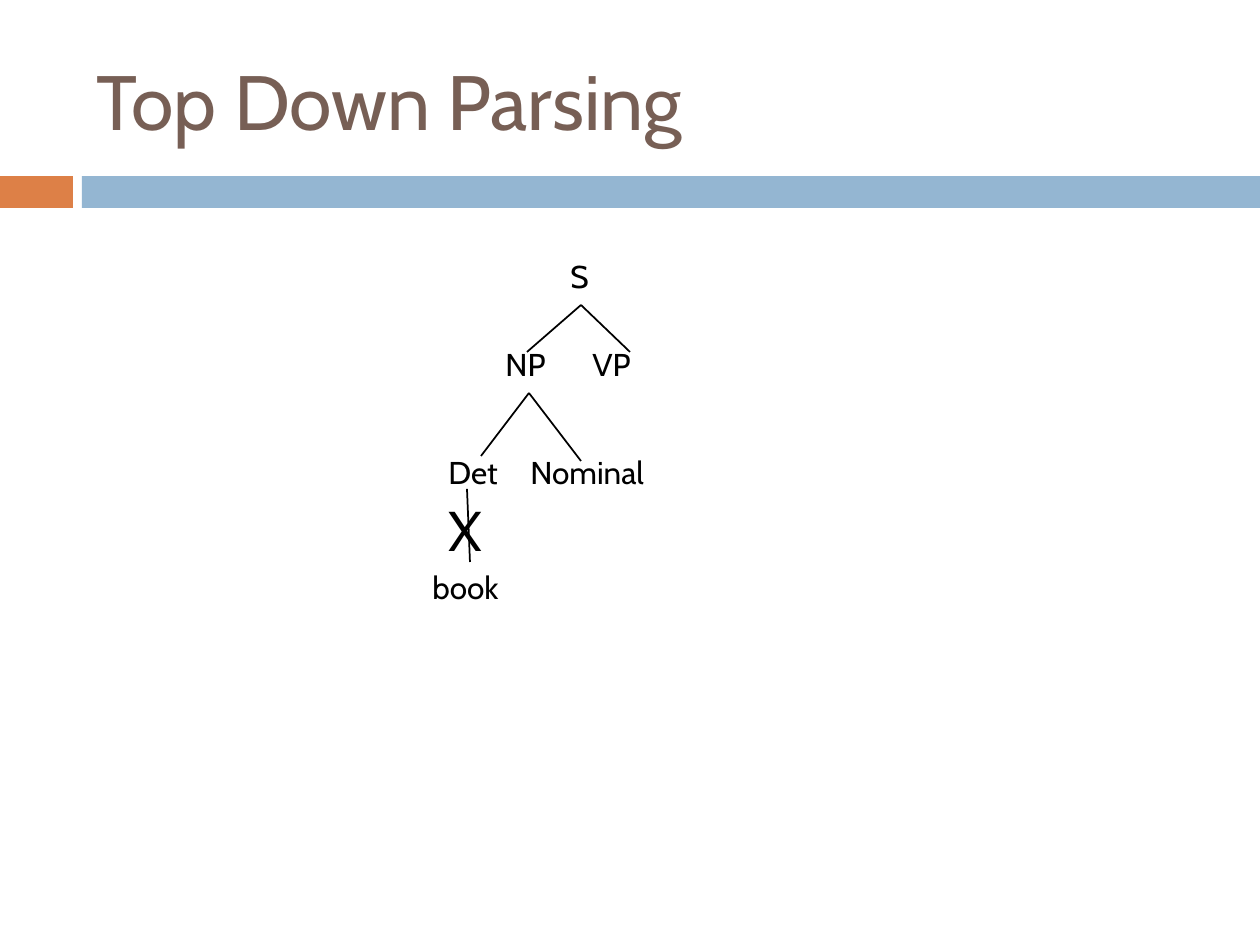
from pptx import Presentation
from pptx.dml.color import RGBColor
from pptx.enum.shapes import MSO_CONNECTOR, MSO_SHAPE
from pptx.enum.text import MSO_ANCHOR, PP_ALIGN
from pptx.oxml.ns import qn
from pptx.util import Pt
from lxml import etree

STRAIGHT = MSO_CONNECTOR.STRAIGHT
RECTANGLE = MSO_SHAPE.RECTANGLE
TOP, BOTTOM = 0, 2
PX = 914400 / 126
NODE_HEIGHT = 54


def color(hex_code):
    return RGBColor.from_string(hex_code)


def write(shape, text, size=18, ink="000000", anchor=MSO_ANCHOR.TOP):
    frame = shape.text_frame
    frame.word_wrap = True
    frame.vertical_anchor = anchor
    paragraph = frame.paragraphs[0]
    paragraph.alignment = PP_ALIGN.LEFT
    run = paragraph.add_run()
    run.text = text
    run.font.name = "Cabin"
    run.font.size = Pt(size)
    run.font.color.rgb = color(ink)


deck = Presentation()
deck.slide_width = round(1260 * PX)
deck.slide_height = round(945 * PX)
slide = deck.slides.add_slide(deck.slide_layouts[5])
shapes = slide.shapes

# Header: two-part band and title
for left, width, fill in ((0, 73, "DD8047"), (82, 1178, "94B6D2")):
    band = shapes.add_shape(RECTANGLE, *(round(v * PX) for v in (left, 176, width, 32)))
    band.shadow.inherit = False
    band.fill.solid()
    band.fill.fore_color.rgb = color(fill)
    band.line.fill.background()

title = shapes.title
title.left, title.top, title.width, title.height = (
    round(v * PX) for v in (84, 32, 1124, 136))
write(title, "Top Down Parsing", size=44, ink="775F55", anchor=MSO_ANCHOR.MIDDLE)

# Words of the parse tree: left, top, width, height, text size
words = {
    "S": (558, 251, 46, NODE_HEIGHT, 18),
    "NP": (493, 339, 72, NODE_HEIGHT, 18),
    "VP": (580, 339, 72, NODE_HEIGHT, 18),
    "Det": (436, 447, 84, NODE_HEIGHT, 18),
    "Nominal": (518, 447, 150, NODE_HEIGHT, 18),
    "book": (420, 562, 100, NODE_HEIGHT, 18),
    "X": (436, 489, 67, 80, 32),
}
nodes = {}
for word, (*box, size) in words.items():
    nodes[word] = shapes.add_textbox(*(round(v * PX) for v in box))
    write(nodes[word], word, size=size)

# Branches: start point, end point, word joined at the start, word joined at the end
branches = (
    (581, 305, 527, 352, "S", None),
    (581, 305, 630, 352, "S", None),
    (529, 393, 481, 456, "NP", None),
    (529, 393, 581, 461, "NP", None),
    (467, 489, 470, 562, None, "book"),
)
for *ends, parent, child in branches:
    branch = shapes.add_connector(STRAIGHT, *(round(v * PX) for v in ends))
    branch.line.color.rgb = color("000000")
    branch.line.width = Pt(1)
    etree.SubElement(branch._element.spPr, qn("a:effectLst"))
    if parent:
        branch.begin_connect(nodes[parent], BOTTOM)
    if child:
        branch.end_connect(nodes[child], TOP)

deck.save("out.pptx")
